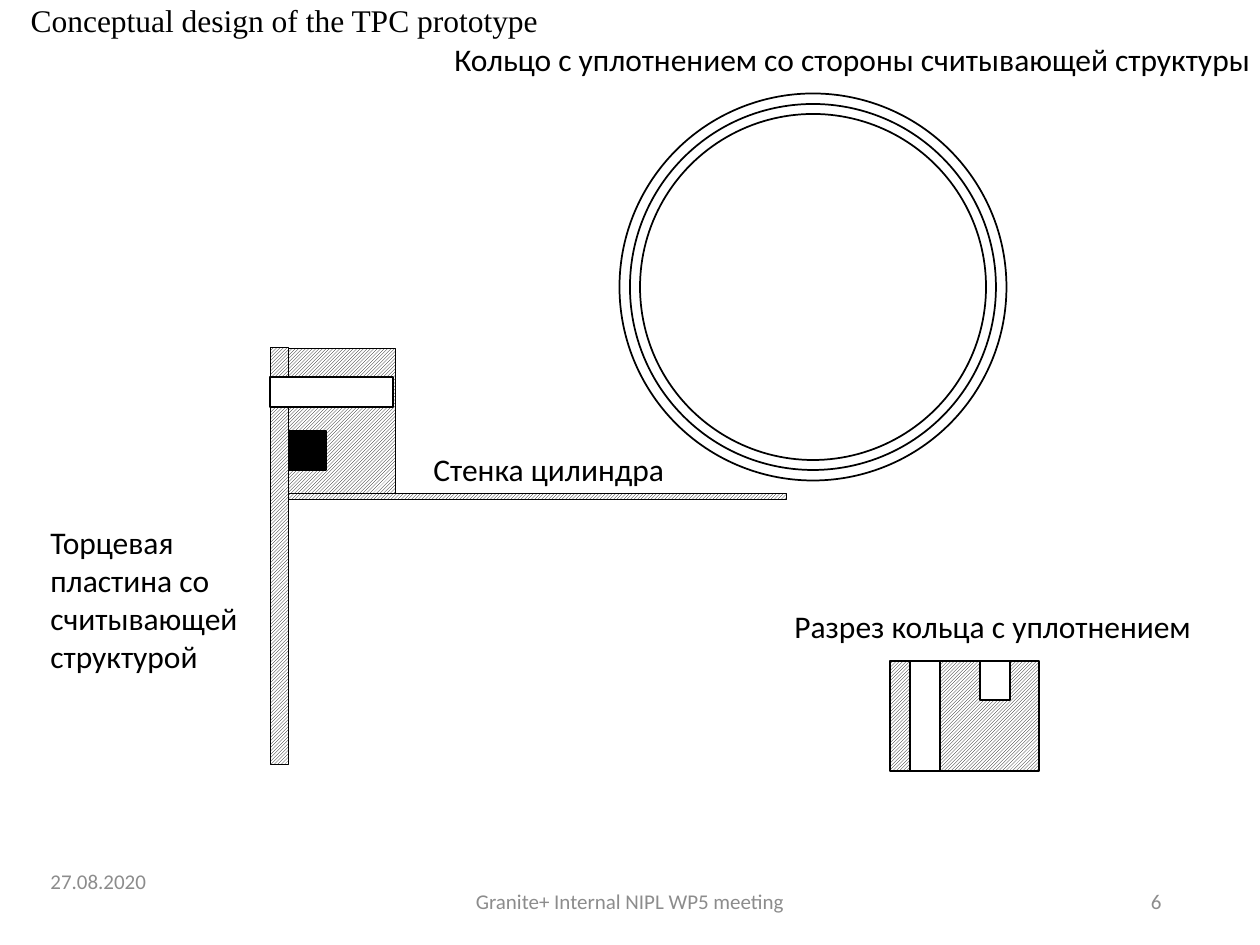
from pptx import Presentation
from pptx.dml.color import RGBColor
from pptx.enum.dml import MSO_PATTERN
from pptx.enum.shapes import MSO_SHAPE
from pptx.enum.text import MSO_ANCHOR, MSO_AUTO_SIZE, PP_ALIGN
from pptx.util import Emu, Pt

PX_PER_INCH = 126
BLACK = RGBColor(0, 0, 0)
WHITE = RGBColor(255, 255, 255)
GREY = RGBColor(0x8C, 0x8C, 0x8C)


def px(length):
    return Emu(round(length * 914400 / PX_PER_INCH))


def write(holder, text, size=18, font="Calibri", color=BLACK,
          align=PP_ALIGN.LEFT, anchor=MSO_ANCHOR.TOP, wrap=False, grow=True):
    frame = holder.text_frame
    frame.text = text
    frame.word_wrap = wrap
    frame.vertical_anchor = anchor
    frame.auto_size = MSO_AUTO_SIZE.SHAPE_TO_FIT_TEXT if grow else MSO_AUTO_SIZE.NONE
    paragraph = frame.paragraphs[0]
    paragraph.alignment = align
    run_font = paragraph.runs[0].font
    run_font.name = font
    run_font.size = Pt(size)
    run_font.color.rgb = color


def add_title(slide, text, box):
    title = slide.shapes.title
    title.left, title.top, title.width, title.height = map(px, box)
    write(title, text, font="Times New Roman")


def add_label(slide, text, box, **style):
    write(slide.shapes.add_textbox(*map(px, box)), text, **style)


def add_footer(slide, text, box, align):
    add_label(slide, text, box, size=12, color=GREY, align=align,
              anchor=MSO_ANCHOR.MIDDLE, wrap=True, grow=False)


def add_outlined(slide, preset, box):
    part = slide.shapes.add_shape(preset, *map(px, box))
    part.shadow.inherit = False
    part.line.color.rgb = BLACK
    part.line.width = Pt(1)
    return part


def add_circle(slide, center_x, center_y, diameter):
    radius = diameter / 2
    box = (center_x - radius, center_y - radius, diameter, diameter)
    add_outlined(slide, MSO_SHAPE.OVAL, box).fill.background()


def add_block(slide, box, color):
    fill = add_outlined(slide, MSO_SHAPE.RECTANGLE, box).fill
    fill.solid()
    fill.fore_color.rgb = color


def add_hatched(slide, box, rotation=0):
    """Add a cut material section; box is its frame before rotation."""
    section = add_outlined(slide, MSO_SHAPE.RECTANGLE, box)
    section.rotation = rotation
    section.fill.patterned()
    section.fill.pattern = MSO_PATTERN.LIGHT_UPWARD_DIAGONAL
    section.fill.fore_color.rgb = BLACK
    section.fill.back_color.rgb = WHITE


def draw_ring_front(slide):
    for diameter in (387, 366, 346):
        add_circle(slide, 813, 287, diameter)
    add_label(slide, "Кольцо с уплотнением со стороны считывающей структуры",
              (442, 34, 830, 50))


def draw_ring_section(slide):
    add_hatched(slide, (890, 661, 149, 110))
    add_block(slide, (980, 661, 30, 39), WHITE)
    add_block(slide, (910, 661, 30, 110), WHITE)
    add_label(slide, "Разрез кольца с уплотнением", (782, 601, 426, 50))


def draw_assembly(slide):
    ring = (266, 368, 149, 110)
    seal = (284, 431, 42, 39)
    cylinder_wall = (534, 247, 6, 499)
    end_plate = (71, 547, 417, 18)
    bolt_hole = (270, 377, 123, 30)
    add_hatched(slide, ring, rotation=90)
    add_block(slide, seal, BLACK)
    add_hatched(slide, cylinder_wall, rotation=90)
    add_hatched(slide, end_plate, rotation=90)
    add_block(slide, bolt_hole, WHITE)
    add_label(slide, "Стенка цилиндра", (421, 444, 258, 50))
    add_label(slide, "Торцевая пластина со считывающей структурой",
              (38, 517, 237, 165), wrap=True)


def main():
    deck = Presentation()
    deck.slide_width, deck.slide_height = px(1260), px(945)
    slide = deck.slides.add_slide(deck.slide_layouts[5])

    add_title(slide, "Conceptual design of the TPC prototype", (18, -5, 538, 50))
    add_footer(slide, "27.08.2020", (38, 856, 284, 50), PP_ALIGN.LEFT)
    add_footer(slide, "Granite+ Internal NIPL WP5 meeting", (417, 876, 426, 50),
               PP_ALIGN.CENTER)
    add_footer(slide, "6", (890, 876, 284, 50), PP_ALIGN.RIGHT)
    draw_ring_front(slide)
    draw_ring_section(slide)
    draw_assembly(slide)

    deck.save("out.pptx")


if __name__ == "__main__":
    main()
